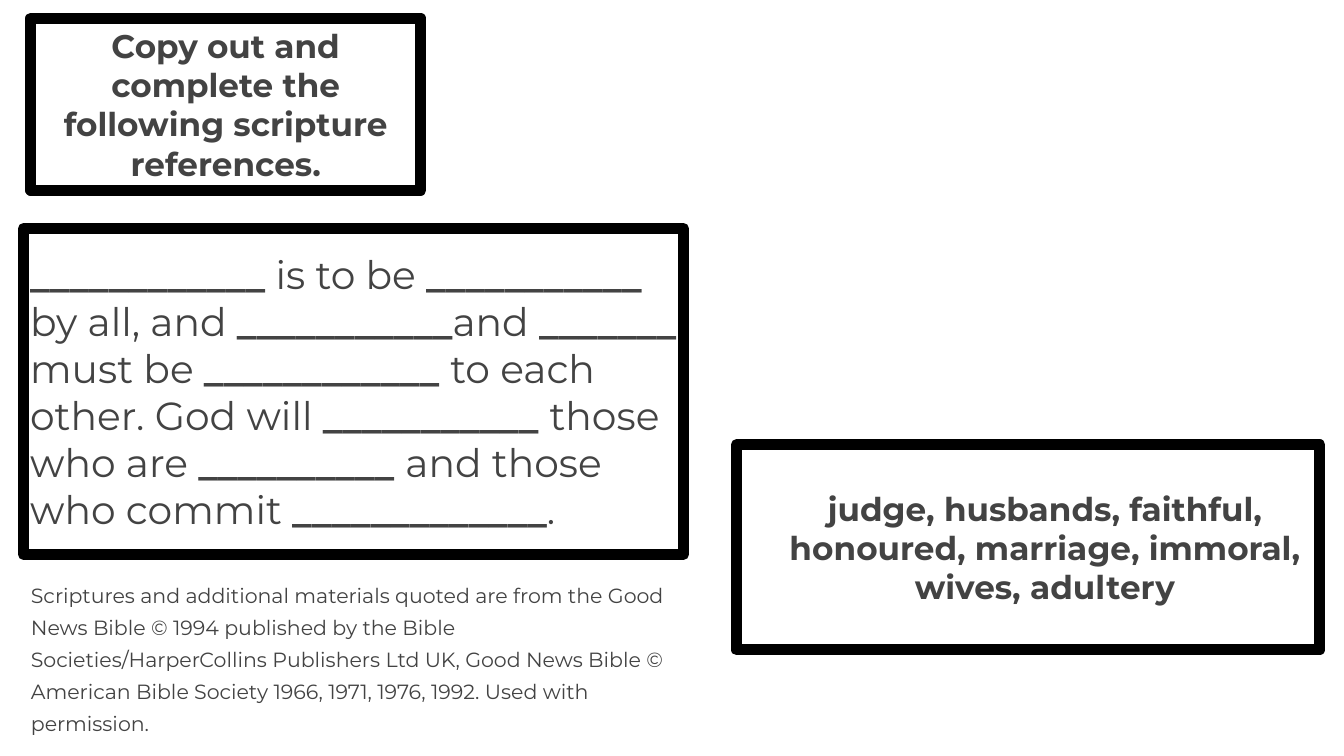
"""Build a fill-in-the-blanks scripture worksheet slide."""
from dataclasses import dataclass

from pptx import Presentation
from pptx.dml.color import RGBColor
from pptx.enum.shapes import MSO_SHAPE
from pptx.enum.text import MSO_ANCHOR, MSO_AUTO_SIZE, PP_ALIGN
from pptx.util import Inches, Pt

RECTANGLE = MSO_SHAPE.RECTANGLE
MIDDLE, BOTTOM = MSO_ANCHOR.MIDDLE, MSO_ANCHOR.BOTTOM
LEFT, CENTER = PP_ALIGN.LEFT, PP_ALIGN.CENTER
NO_AUTOFIT = MSO_AUTO_SIZE.NONE
TITLE_ONLY = 5


@dataclass(frozen=True)
class Theme:
    font: str = "Montserrat"
    ink: RGBColor = RGBColor(0x43, 0x43, 0x43)
    paper: RGBColor = RGBColor(0xFF, 0xFF, 0xFF)
    border: RGBColor = RGBColor(0, 0, 0)
    border_width: int = 12
    heading_size: int = 35
    verse_size: int = 42
    credit_size: int = 22


THEME = Theme()

INSTRUCTION = ["Copy out and complete the following scripture references."]
VERSE = [
    "____________", " is to be ", "___________ ", "by all, and ",
    "___________", "and ", "_______ ", "must be ", "____________ ",
    "to each other. God will ", "___________ ", "those who are ",
    "__________ ", "and those who commit ", "_____________", ".",
]
WORD_BANK = ["judge, husbands, faithful, honoured, marriage, immoral, wives, adultery"]
CREDIT = [
    "Scriptures and additional materials quoted are from the Good News Bible "
    "© 1994 published by the Bible Societies/HarperCollins Publishers Ltd UK, "
    "Good News Bible © American Bible Society 1966, 1971, 1976, 1992. "
    "Used with permission."
]

INSTRUCTION_BOX = (0.46, 0.27, 5.8, 2.56)
VERSE_BOX = (0.35, 3.4, 9.82, 4.85)
WORD_BANK_BOX = (10.96, 6.62, 8.68, 3.05)
CREDIT_BOX = (0.46, 8.5, 9.51, 2.44)


def write_text(shape, parts, size, bold=False, align=LEFT, anchor=MIDDLE,
               inset=0.1, indent=0, line_spacing=1.0):
    """Write text parts as runs; blanks to fill in are always bold."""
    frame = shape.text_frame
    frame.word_wrap = True
    frame.auto_size = NO_AUTOFIT
    frame.vertical_anchor = anchor
    frame.margin_left = frame.margin_right = Inches(inset)
    frame.margin_top = frame.margin_bottom = Inches(inset)
    paragraph = frame.paragraphs[0]
    paragraph.alignment = align
    paragraph.line_spacing = line_spacing
    if indent:
        properties = paragraph._p.get_or_add_pPr()
        properties.set("marL", str(Inches(indent)))
        properties.set("indent", "0")
    for part in parts:
        run = paragraph.add_run()
        run.text = part
        run.font.name = THEME.font
        run.font.size = Pt(size)
        run.font.bold = bold or part.startswith("_")
        run.font.color.rgb = THEME.ink


def frame_shape(shape):
    """Give a shape the white fill and heavy border of the worksheet."""
    shape.fill.solid()
    shape.fill.fore_color.rgb = THEME.paper
    shape.line.color.rgb = THEME.border
    shape.line.width = Pt(THEME.border_width)


def add_panel(slide, box):
    """Add a bordered rectangle."""
    panel = slide.shapes.add_shape(RECTANGLE, *map(Inches, box))
    panel.shadow.inherit = False
    frame_shape(panel)
    return panel


def main():
    """Build and save the slide."""
    presentation = Presentation()
    presentation.slide_width = Inches(20)
    presentation.slide_height = Inches(11.25)
    slide = presentation.slides.add_slide(presentation.slide_layouts[TITLE_ONLY])

    title = slide.shapes.title
    title.left, title.top, title.width, title.height = map(Inches, INSTRUCTION_BOX)
    frame_shape(title)
    write_text(title, INSTRUCTION, THEME.heading_size, bold=True, align=CENTER)

    write_text(add_panel(slide, VERSE_BOX), VERSE, THEME.verse_size)
    write_text(add_panel(slide, WORD_BANK_BOX), WORD_BANK, THEME.heading_size,
               bold=True, align=CENTER, indent=0.5)

    credit = slide.shapes.add_textbox(*map(Inches, CREDIT_BOX))
    write_text(credit, CREDIT, THEME.credit_size, anchor=BOTTOM, inset=0,
               line_spacing=1.3)

    presentation.save("out.pptx")


if __name__ == "__main__":
    main()
